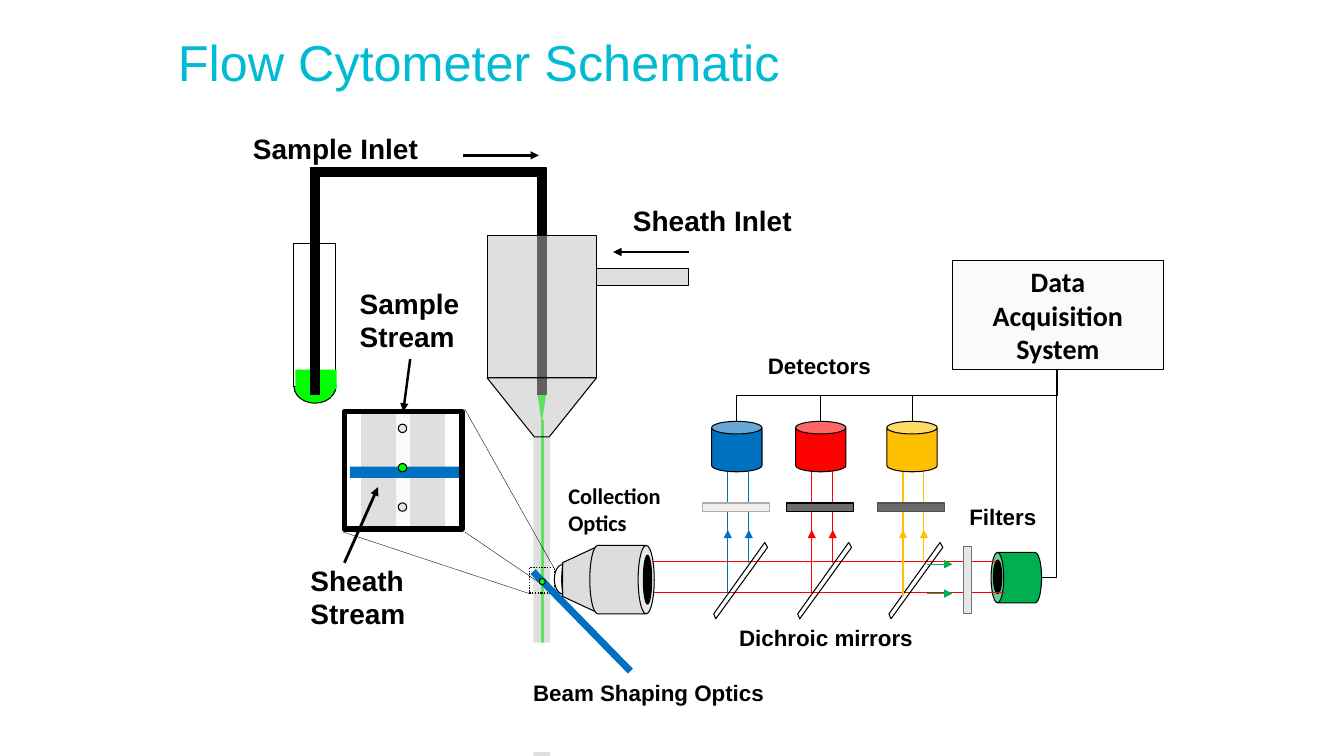
from lxml.etree import SubElement
from pptx import Presentation
from pptx.dml.color import RGBColor
from pptx.enum.dml import MSO_LINE
from pptx.enum.shapes import MSO_CONNECTOR, MSO_SHAPE
from pptx.enum.text import MSO_ANCHOR, PP_ALIGN
from pptx.oxml.ns import qn
from pptx.util import Pt

BLACK, WHITE, GREEN, BLUE, RED = "000000", "FFFFFF", "00FF00", "0070C0", "FF0000"
AMBER, DARK_GREEN, SHEATH, LENS, PALE = "FFC000", "00B050", "C0C0C0", "DDDDDD", "E7E6E6"
DETECTOR_TOP, DETECTOR_SIZE = 301, 36
SYSTEM_X, SYSTEM_BOTTOM = 755, 264


def color(value):
    return RGBColor.from_string(value)


def paint(shape, fill, line, width, alpha):
    shape.shadow.inherit = False
    if fill:
        shape.fill.solid()
        shape.fill.fore_color.rgb = color(fill)
        if alpha:
            tint = shape.fill._xPr.find(qn("a:solidFill"))[0]
            SubElement(tint, qn("a:alpha")).set("val", str(alpha * 1000))
    else:
        shape.fill.background()
    if line:
        shape.line.color.rgb = color(line)
        shape.line.width = Pt(width)
    else:
        shape.line.fill.background()
    return shape


def add_solid(page, kind, left, top, width, height, fill=None, line=None,
              weight=0.75, alpha=None, turn=0):
    shape = page.shapes.add_shape(kind, Pt(left), Pt(top), Pt(width), Pt(height))
    shape.rotation = turn
    return paint(shape, fill, line, weight, alpha)


def add_rect(page, *place, **look):
    return add_solid(page, MSO_SHAPE.RECTANGLE, *place, **look)


def add_oval(page, *place, **look):
    return add_solid(page, MSO_SHAPE.OVAL, *place, **look)


def add_can(page, *place, **look):
    return add_solid(page, MSO_SHAPE.CAN, *place, line=BLACK, **look)


def add_outline(page, corners, fill=None, line=BLACK, alpha=None):
    start, *rest = [(Pt(x), Pt(y)) for x, y in corners]
    builder = page.shapes.build_freeform(*start)
    builder.add_line_segments(rest, close=True)
    return paint(builder.convert_to_shape(), fill, line, 0.75, alpha)


def add_line(page, x1, y1, x2, y2, line=BLACK, weight=0.75, arrow=False,
             kind=MSO_CONNECTOR.STRAIGHT):
    connector = page.shapes.add_connector(kind, Pt(x1), Pt(y1), Pt(x2), Pt(y2))
    connector.line.color.rgb = color(line)
    connector.line.width = Pt(weight)
    properties = connector._element.spPr
    if arrow:
        SubElement(properties.find(qn("a:ln")), qn("a:tailEnd")).set("type", "triangle")
    SubElement(properties, qn("a:effectLst"))
    return connector


def add_detector_wire(page, x):
    width, height = SYSTEM_X - x, DETECTOR_TOP - SYSTEM_BOTTOM
    middle_x, middle_y = x + width / 2, SYSTEM_BOTTOM + height / 2
    wire = add_line(page, middle_x + height / 2, middle_y + width / 2,
                    middle_x - height / 2, middle_y - width / 2,
                    kind=MSO_CONNECTOR.ELBOW)
    wire._element.spPr.find(qn("a:xfrm")).set("rot", "5400000")


def write(box, text, size, font, ink=BLACK, bold=True, align=PP_ALIGN.LEFT):
    box.text_frame.text = text
    for para in box.text_frame.paragraphs:
        para.alignment = align
        for span in para.runs:
            span.font.size = Pt(size)
            span.font.name = font
            span.font.bold = bold
            span.font.color.rgb = color(ink)


def add_label(page, text, left, top, width, height, size=16, font="Arial",
              wrap=False, **look):
    box = page.shapes.add_textbox(Pt(left), Pt(top), Pt(width), Pt(height))
    box.text_frame.word_wrap = wrap
    write(box, text, size, font, **look)
    return box


def add_channel(page, x, ink, filter_fill, filter_line):
    add_outline(page, [(x - 16.5, 438.5), (x + 20, 387.5), (x + 22, 391), (x - 15, 442)])
    for beam_x, beam_y in ((x + 8.5, 402), (x - 6.5, 425.5)):
        add_line(page, beam_x, beam_y, beam_x, 336, ink)
        add_line(page, beam_x, 396.5, beam_x, 378.5, ink, arrow=True)
    add_rect(page, x - 24.5, 359.3, 48, 5.8, fill=filter_fill, line=filter_line)
    add_can(page, x - DETECTOR_SIZE / 2, DETECTOR_TOP, DETECTOR_SIZE, DETECTOR_SIZE, fill=ink)
    add_detector_wire(page, x)


def add_flow_cell(page):
    add_line(page, 387.4, 300, 387.4, 534, GREEN, 2)
    add_rect(page, 381, 312, 12, 240, fill=SHEATH, alpha=50)
    add_rect(page, 348, 459, 132, 78, fill=WHITE)
    add_outline(page, [(384, 282), (386.6, 300), (387.4, 300), (390, 282)], GREEN, None)
    add_oval(page, 210, 264, 30, 24, fill=GREEN, line=BLACK)
    add_rect(page, 384, 120, 6, 162, fill=BLACK, line=BLACK, weight=1)
    add_rect(page, 348, 168, 78, 102, fill=SHEATH, line=BLACK, alpha=50)
    add_outline(page, [(348, 270), (381.6, 312), (392.4, 312), (426, 270)], SHEATH, alpha=50)
    add_rect(page, 222, 120, 168, 6, fill=BLACK, line=BLACK, weight=1)
    add_rect(page, 210, 174, 30, 102, fill=WHITE, line=BLACK)
    add_rect(page, 426, 192, 66, 12, fill=SHEATH, line=BLACK, alpha=50)
    add_rect(page, 211, 264, 29.5, 14, fill=GREEN)
    add_rect(page, 222, 120, 6, 162, fill=BLACK, line=BLACK, weight=1)
    add_line(page, 331, 111, 385, 111, weight=2, arrow=True)
    add_line(page, 492, 180, 438, 180, weight=2, arrow=True)


def add_close_up(page):
    add_rect(page, 290, 294, 28, 84, fill=SHEATH, alpha=50)
    add_line(page, 288, 294, 288, 378, "FAFAFA", 10)
    add_rect(page, 258, 294, 25, 84, fill=SHEATH, alpha=50)
    add_rect(page, 250, 333.4, 79, 8, fill=BLUE)
    spot = add_rect(page, 378, 405.5, 18, 18, line=BLACK, weight=1)
    spot.line.dash_style = MSO_LINE.ROUND_DOT
    for ends in ((396.7, 407.5, 332, 292.3), (378, 424, 245, 380), (332, 380, 396.7, 424)):
        add_line(page, *ends, weight=0.25)
    add_rect(page, 365.8, 441.4, 99.4, 5, fill=BLUE, turn=45.6)
    for row, fill in enumerate((PALE, GREEN, PALE)):
        add_oval(page, 284.5, 303 + 28.1 * row, 6, 6, fill=fill, line=BLACK)
    frame = add_rect(page, 246, 294, 84, 84, line=BLACK, weight=4)
    add_line(page, 246, 402, 270, 348, weight=2, arrow=True)
    add_line(page, 293, 256.5, 288, 294, weight=1.75, arrow=True).end_connect(frame, 0)
    add_oval(page, 385.2, 413.3, 4.3, 4.3, fill=GREEN, line=BLACK, weight=0)


def add_optics(page):
    add_can(page, 708, 394.6, DETECTOR_SIZE, DETECTOR_SIZE, fill=DARK_GREEN, turn=270)
    add_oval(page, 700.6, 409, 24, 6, fill=BLACK, line=BLACK, turn=90)
    add_line(page, 455.8, 423.4, 718, 423.4, RED)
    add_line(page, 454.3, 401, 712, 401, RED)
    add_channel(page, 526.3, BLUE, "F1F0F0", "AFABAB")
    add_channel(page, 586.3, RED, "6B6B6B", BLACK)
    add_channel(page, 651.5, AMBER, "6B6B6B", "525252")
    for y in (424, 403):
        add_line(page, 662.4, y, 680.4, y, DARK_GREEN, arrow=True)
    add_outline(page, [(428.4, 389.6), (401.8, 402), (401.8, 426), (428.4, 438.4)], LENS)
    add_can(page, 419.8, 391, 49, 46, fill=LENS, turn=90)
    add_oval(page, 445, 411, 35, 6, fill=BLACK, line=BLACK, turn=90)
    moon = add_solid(page, MSO_SHAPE.MOON, 396, 403.2, 6, 21, fill=WHITE, line=BLACK)
    moon.adjustments[0] = 0.875
    add_rect(page, 688.3, 390.2, 6, 48, fill=PALE, line="767171", weight=0)


def add_data_system(page):
    system = add_rect(page, 680.4, 186, 150.5, 78, fill="FAFAFA", line=BLACK)
    frame = system.text_frame
    frame.word_wrap = True
    frame.margin_left = frame.margin_right = Pt(10)
    frame.vertical_anchor = MSO_ANCHOR.MIDDLE
    write(system, "Data Acquisition System", 20, "Calibri", align=PP_ALIGN.CENTER)
    wire = add_line(page, 744, 412.6, SYSTEM_X, SYSTEM_BOTTOM, kind=MSO_CONNECTOR.ELBOW)
    wire._element.spPr.find(qn("a:prstGeom")).set("prst", "bentConnector2")


def add_labels(page):
    title = add_label(page, "Flow Cytometer Schematic", 120, 14.4, 720, 64.8, 36,
                      wrap=True, ink="00BBD4", bold=False)
    title.text_frame.vertical_anchor = MSO_ANCHOR.MIDDLE
    title.text_frame.paragraphs[0].line_spacing = 0.9
    add_label(page, "Sample Inlet", 173.5, 90.7, 133.2, 31.5, 20)
    add_label(page, "Sheath Inlet", 445, 141.8, 208.8, 31.5, 20, wrap=True)
    add_label(page, "Sample\nStream", 249.8, 200.9, 86.4, 55.4, 20)
    add_label(page, "Sheath\nStream", 214.6, 398.9, 82.8, 55.4, 20)
    add_label(page, "Beam Shaping Optics", 373.7, 481.7, 181.4, 26.6)
    add_label(page, "Filters", 681.8, 355.7, 69.1, 26.6, align=PP_ALIGN.CENTER)
    add_label(page, "Dichroic mirrors", 519.8, 442.1, 140.4, 26.6, align=PP_ALIGN.CENTER)
    add_label(page, "Detectors", 541.4, 247.7, 89.3, 26.6)
    add_label(page, "Collection\nOptics", 398.9, 340.6, 85, 46, font="Calibri")


def main():
    deck = Presentation()
    deck.slide_width, deck.slide_height = Pt(960), Pt(540)
    page = deck.slides.add_slide(deck.slide_layouts[6])
    add_flow_cell(page)
    add_close_up(page)
    add_optics(page)
    add_data_system(page)
    add_labels(page)
    deck.save("out.pptx")


if __name__ == "__main__":
    main()
